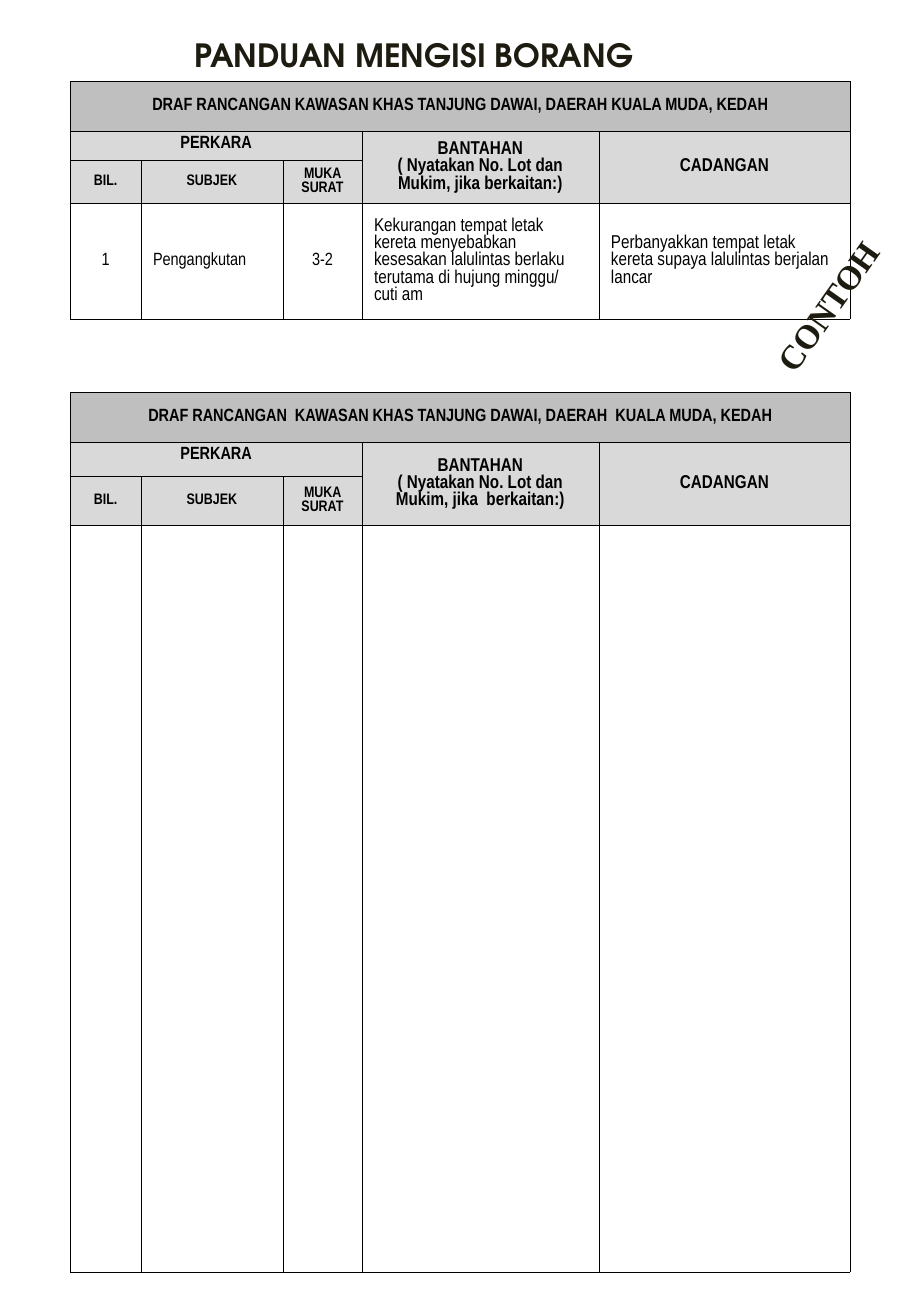
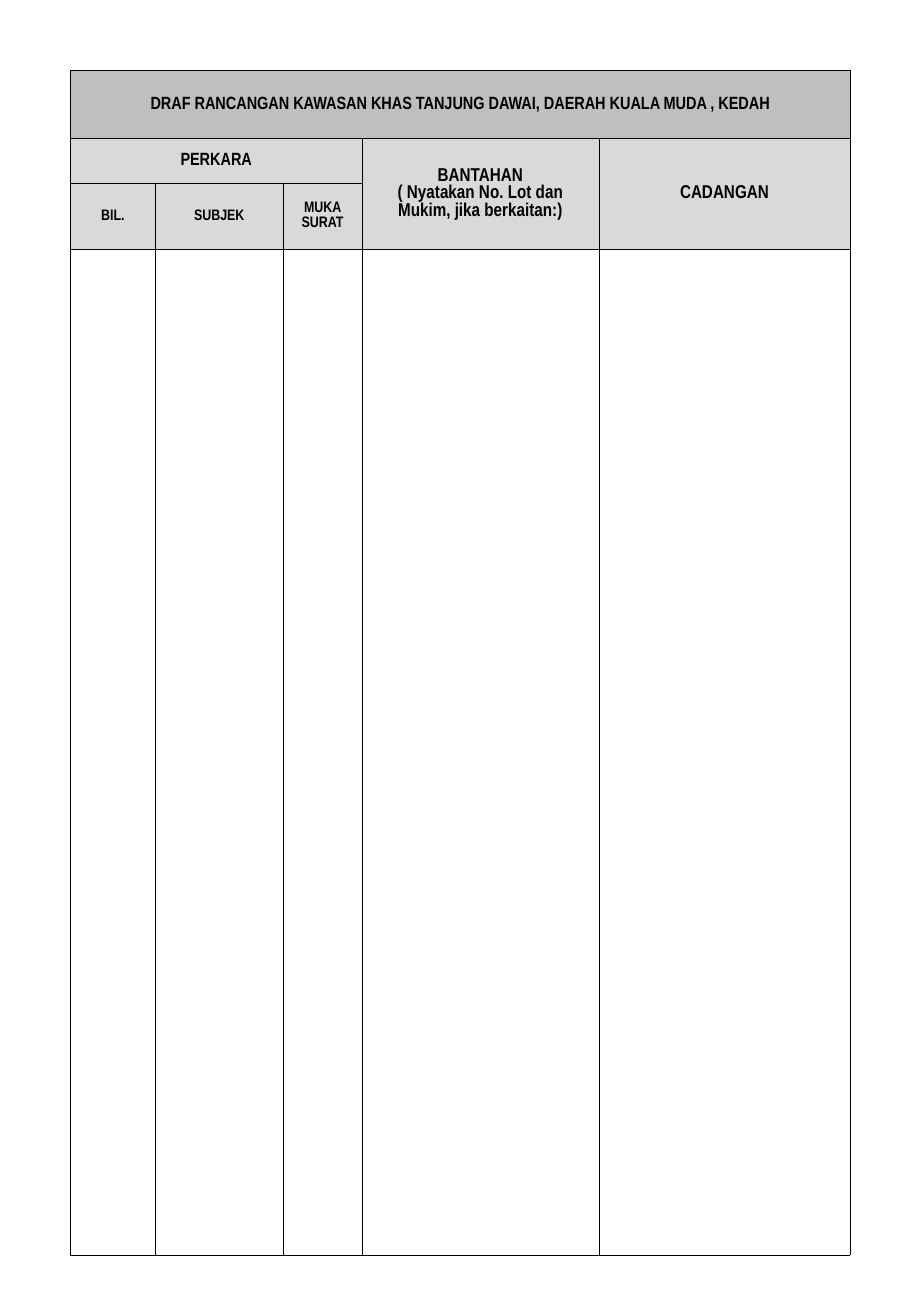
import pptx
import pptx.util
import pptx.dml.color
import pptx.enum.text
import pptx.oxml
import pptx.oxml.ns
from lxml import etree

Inches, Pt = pptx.util.Inches, pptx.util.Pt
RGBColor = pptx.dml.color.RGBColor
ALIGN, ANCHOR = pptx.enum.text.PP_ALIGN, pptx.enum.text.MSO_ANCHOR
FIT = pptx.enum.text.MSO_AUTO_SIZE

# Shared style
BLACK = RGBColor(0x00, 0x00, 0x00)
INK = RGBColor(0x1E, 0x1C, 0x11)
BAND = RGBColor(0xBF, 0xBF, 0xBF)
HEADER = RGBColor(0xD9, 0xD9, 0xD9)
BODY_FONT = "Arial Narrow"
TITLE_FONT = "TeX Gyre Adventor"
STAMP_FONT = "Times New Roman"
PAGE_WIDTH, PAGE_HEIGHT = 7.5, 10.83
MARGIN = 0.58
CELL_PADDING = 0.02

# Content
TITLE = "PANDUAN MENGISI BORANG"
STAMP = "CONTOH"
NOTE = "( Nyatakan No. Lot dan Mukim, jika berkaitan:)"
EXAMPLE = [
    "1",
    "Pengangkutan",
    "3-2",
    "Kekurangan tempat letak kereta menyebabkan kesesakan lalulintas berlaku "
    "terutama di hujung minggu/ cuti am",
    "Perbanyakkan tempat letak kereta supaya lalulintas berjalan lancar",
]
NARROW_COLUMNS = [0.58, 1.17, 0.65, 1.95, 2.07]
WIDE_COLUMNS = [0.7, 1.05, 0.65, 1.95, 2.07]
EXAMPLE_FORM = dict(
    heading="DRAF RANCANGAN KAWASAN KHAS TANJUNG DAWAI, DAERAH KUALA MUDA, KEDAH",
    note=NOTE, top=0.67, columns=NARROW_COLUMNS, rows=[0.41, 0.24, 0.34, 0.81],
    entries=EXAMPLE)
BLANK_FORM = dict(
    heading="DRAF RANCANGAN  KAWASAN KHAS TANJUNG DAWAI, DAERAH  KUALA MUDA, KEDAH",
    note="( Nyatakan No. Lot dan Mukim, jika  berkaitan:)",
    top=3.23, columns=NARROW_COLUMNS, rows=[0.41, 0.28, 0.4, 6.15])
EXTRA_FORM = dict(
    heading="DRAF RANCANGAN KAWASAN KHAS TANJUNG DAWAI, DAERAH KUALA MUDA , KEDAH",
    note=NOTE, top=0.58, columns=WIDE_COLUMNS, rows=[0.56, 0.37, 0.54, 8.28],
    subject_anchor=ANCHOR.MIDDLE)


def write(frame, text, *, size, font=BODY_FONT, color=BLACK, bold=True,
          align=ALIGN.CENTER):
    """Fill a text frame, one paragraph per line, and return the last run."""
    for index, line in enumerate(text.split("\n")):
        para = frame.add_paragraph() if index else frame.paragraphs[0]
        para.alignment = align
        span = para.add_run()
        span.text = line
        span.font.size, span.font.name, span.font.bold = Pt(size), font, bold
        span.font.color.rgb = color
    return span


def outline(parent, position, tag, width, color):
    """Insert a solid line element of the given width in points."""
    line = pptx.oxml.parse_xml(
        f'<a:{tag} {pptx.oxml.ns.nsdecls("a")} w="{int(Pt(width))}">'
        f'<a:solidFill><a:srgbClr val="{color}"/></a:solidFill></a:{tag}>')
    parent.insert(position, line)


def format_cell(cell, fill):
    if fill is None:
        cell.fill.background()
    else:
        cell.fill.solid()
        cell.fill.fore_color.rgb = fill
    cell.vertical_anchor = ANCHOR.MIDDLE
    cell.margin_top = cell.margin_bottom = Inches(CELL_PADDING)
    for position, tag in enumerate(("lnL", "lnR", "lnT", "lnB")):
        outline(cell.fill._xPr, position, tag, 0.25, BLACK)
    # Small type in empty cells keeps the rows from growing
    etree.SubElement(cell.text_frame.paragraphs[0]._p,
                     pptx.oxml.ns.qn("a:endParaRPr"), sz="900")


def add_form(page, *, heading, note, top, columns, rows, entries=None,
             subject_anchor=ANCHOR.TOP):
    table = page.shapes.add_table(
        len(rows), len(columns), Inches(MARGIN), Inches(top),
        Inches(sum(columns)), Inches(sum(rows))).table
    table.first_row = table.horz_banding = False
    for column, width in zip(table.columns, columns):
        column.width = Inches(width)
    for row, height, fill in zip(table.rows, rows, (BAND, HEADER, HEADER, None)):
        row.height = Inches(height)
        for cell in row.cells:
            format_cell(cell, fill)

    # Headings: row, column, last row, last column, text, size
    headings = [
        (0, 0, 0, 4, heading, 10.5),
        (1, 0, 1, 2, "PERKARA", 10.5),
        (1, 3, 2, 3, "BANTAHAN\n" + note, 11),
        (1, 4, 2, 4, "CADANGAN", 11),
        (2, 0, 2, 0, "BIL.", 9),
        (2, 1, 2, 1, "SUBJEK", 9),
        (2, 2, 2, 2, "MUKA SURAT", 9),
    ]
    for first_row, first_column, last_row, last_column, text, size in headings:
        cell = table.cell(first_row, first_column)
        if (first_row, first_column) != (last_row, last_column):
            cell.merge(table.cell(last_row, last_column))
        write(cell.text_frame, text, size=size)
    subject = table.cell(1, 0)
    subject.vertical_anchor = subject_anchor
    if subject_anchor == ANCHOR.TOP:
        subject.margin_top = Inches(0.04)

    # Entry row
    for index, text in enumerate(entries or []):
        write(table.cell(3, index).text_frame, text, bold=False,
              size=11 if index > 2 else 10.5,
              align=ALIGN.CENTER if index in (0, 2) else ALIGN.LEFT)


def place(shape, left, top, width, height):
    shape.left, shape.top = Inches(left), Inches(top)
    shape.width, shape.height = Inches(width), Inches(height)


def add_title(page):
    title = page.shapes.title
    place(title, 1.5, 0.24, 3.88, 0.42)
    frame = title.text_frame
    frame.word_wrap, frame.auto_size = False, FIT.SHAPE_TO_FIT_TEXT
    frame.vertical_anchor = ANCHOR.TOP
    write(frame, TITLE, size=19, font=TITLE_FONT, color=INK, align=ALIGN.LEFT)


def add_stamp(page):
    box = page.shapes.add_textbox(0, 0, 0, 0)
    place(box, 6.05, 2.21, 1.65, 0.44)
    box.rotation = 305.2
    frame = box.text_frame
    frame.word_wrap, frame.auto_size = True, FIT.SHAPE_TO_FIT_TEXT
    span = write(frame, STAMP, size=20, font=STAMP_FONT, color=INK,
                 align=ALIGN.LEFT)
    outline(span.font._element, 0, "ln", 0.8, BLACK)


def main():
    deck = pptx.Presentation()
    deck.slide_width, deck.slide_height = Inches(PAGE_WIDTH), Inches(PAGE_HEIGHT)
    title_only, blank = deck.slide_layouts[5], deck.slide_layouts[6]

    # Guide with a filled example
    guide = deck.slides.add_slide(title_only)
    add_form(guide, **EXAMPLE_FORM)
    add_title(guide)
    add_form(guide, **BLANK_FORM)
    add_stamp(guide)

    # Continuation form
    add_form(deck.slides.add_slide(blank), **EXTRA_FORM)
    deck.save("out.pptx")


if __name__ == "__main__":
    main()
